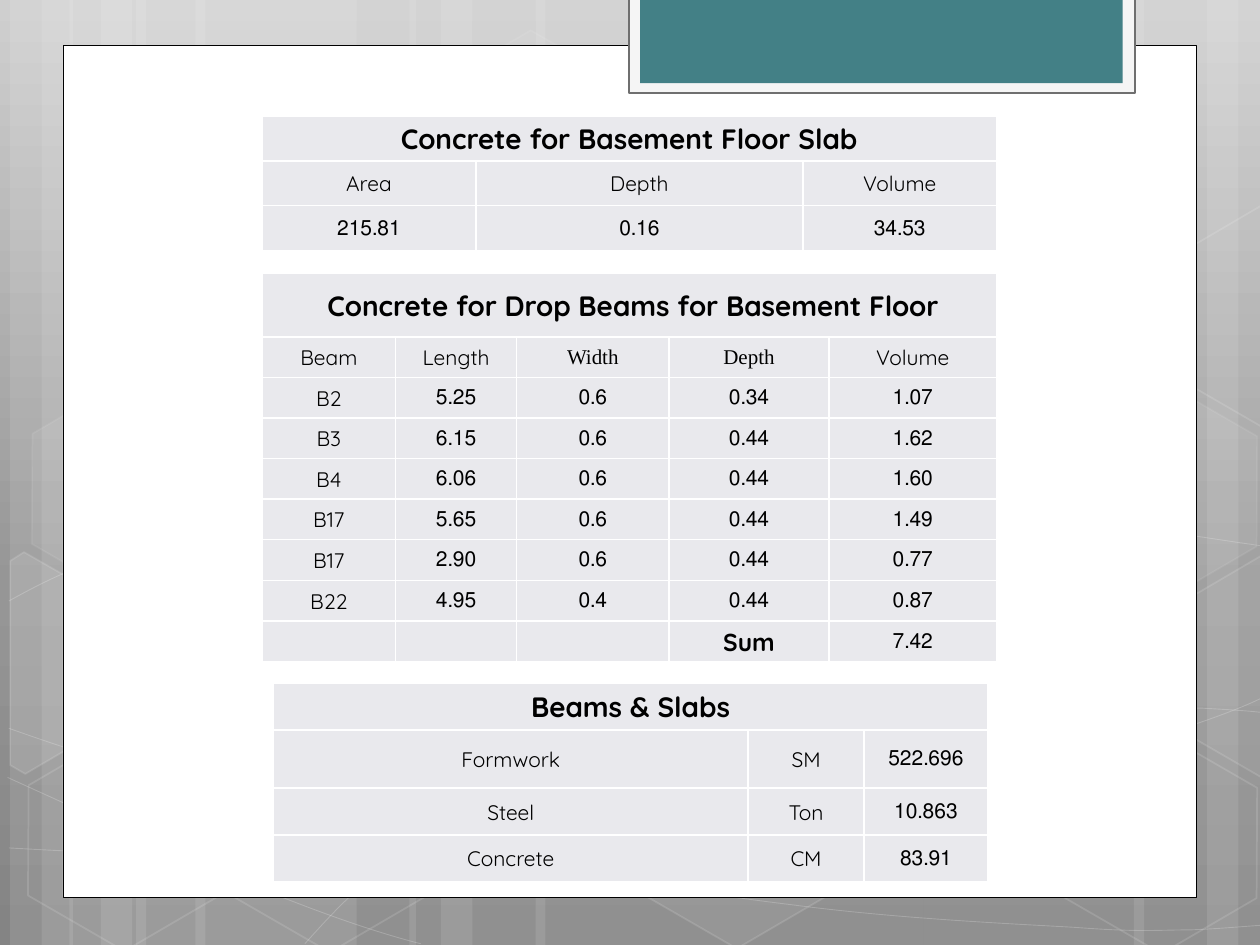
import math
from copy import deepcopy

from lxml import etree
from pptx import Presentation
from pptx.dml.color import RGBColor
from pptx.enum import shapes, text
from pptx.oxml.ns import qn
from pptx.util import Inches, Pt

COLORS = {"white": "FFFFFF", "black": "000000", "cell": "E9E9ED", "teal": "438086",
          "tab": "F5F5F5", "tab_edge": "6F6F6F"}
BACKGROUND = [(0, "CFCFCF"), (0.62, "969696"), (1, "848484")]
FONT, SERIF = "Quicksand", "Times New Roman"
TILT = 30

# Left and width of the full-height translucent bars
BARS = [(1.08, 1.75), (0.08, 0.5), (0.33, 0.83), (1.55, 1.75), (0.55, 0.5), (0.8, 0.83),
        (7.33, 1.75), (9.58, 0.5), (9, 0.83), (4.25, 3.08), (3.25, 0.5), (3.5, 0.83)]

# Bezier chains: a start point, then two handles and an end point per segment
CURVES = [
    [(0.07, 6.73), (0.61, 6.76), (1.15, 6.79), (1.9, 6.78), (2.65, 6.77), (3.58, 6.75),
     (4.58, 6.65), (5.58, 6.55), (7, 6.36), (7.92, 6.17), (8.83, 5.98), (9.77, 5.68),
     (10.07, 5.51)],
    [(0.07, 4.77), (0.36, 4.61), (0.65, 4.46), (1.21, 4.31), (1.78, 4.16), (2.59, 3.94),
     (3.47, 3.87), (4.36, 3.8), (5.44, 3.79), (6.54, 3.87), (7.64, 3.95), (9.47, 4.26),
     (10.07, 4.34)],
    [(0.06, 6.17), (1.27, 6.72), (2.47, 7.27), (3.34, 7.49)],
    [(0.07, 5.78), (0.38, 5.89), (0.7, 6), (1.28, 6.16), (1.86, 6.31), (2.73, 6.56),
     (3.57, 6.73), (4.4, 6.9), (5.45, 7.08), (6.28, 7.18), (7.11, 7.29), (8, 7.33),
     (8.53, 7.36), (9.05, 7.4), (9.19, 7.38), (9.45, 7.38), (9.71, 7.37), (9.89, 7.35),
     (10.07, 7.34)],
    [(2.42, 7.49), (2.6, 7.29), (2.78, 7.09), (3.02, 6.91), (3.26, 6.73), (3.6, 6.53),
     (3.88, 6.39), (4.16, 6.25), (4.33, 6.19), (4.7, 6.09), (5.06, 5.99), (5.73, 5.85),
     (6.08, 5.78), (6.44, 5.71), (6.49, 5.71), (6.8, 5.69), (7.11, 5.66), (7.6, 5.63),
     (7.94, 5.62), (8.29, 5.61), (8.86, 5.62), (8.86, 5.62), (9.08, 5.62), (9.31, 5.62),
     (9.53, 5.62), (9.71, 5.63), (9.88, 5.64), (9.97, 5.65), (10.06, 5.66), (10.03, 5.65),
     (10.06, 5.66)],
]

# Left, top, fill opacity (0 = no fill), line opacity
HEXAGONS = [(3.34, 0.36, 4, 8), (4.97, 5.89, 6, 12), (0.11, 5.91, 0, 12), (0.14, 3.12, 7, 8),
            (1.74, 5.92, 0, 12), (7.53, 4.53, 10, 12), (8.34, 5.93, 0, 12), (8.34, 3.14, 7, 8)]

# Hexagons cut off by the slide edge: centre of rotation, corners, fill opacity
CUT_HEXAGONS = [
    ((0.36, 5.35), [(0.08, 4.45), (0.19, 4.38), (0.96, 4.82), (0.95, 5.7), (0.2, 6.14),
                    (0.08, 6.07)], 10),
    ((9.85, 5.2), [(9.26, 4.85), (10.01, 4.41), (10.09, 4.46), (10.09, 6.13), (10.02, 6.17),
                   (9.26, 5.73)], 4),
    ((9.85, 2.41), [(9.26, 2.07), (10.01, 1.63), (10.1, 1.68), (10.09, 3.35), (10.02, 3.39),
                    (9.26, 2.95)], 0),
]

# Left, top, width, height, fill, line colour, line width
PANELS = [(0.5, 0.36, 9, 6.76, "white", "black", 0.5),
          (4.99, -0.02, 4.02, 0.76, "tab", "tab_edge", 1.25),
          (5.08, -0.02, 3.83, 0.68, "teal", None, 0)]

# Columns and rows are shares of the width and height in the box
TABLES = [
    {"box": (2.08, 0.92, 5.83, 1.07), "columns": [1.7, 2.6, 1.54], "rows": [1] * 3,
     "title": "Concrete for Basement Floor Slab",
     "body": [("Area", "Depth", "Volume"), ("215.81", "0.16", "34.53")]},
    {"box": (2.08, 2.17, 5.83, 3.08), "columns": [1.06, 0.96, 1.21, 1.27, 1.33],
     "rows": [0.5] + [0.32] * 8,
     "title": "Concrete for Drop Beams for Basement Floor ",
     "serif": [(1, 2), (1, 3)],
     "body": [("Beam", "Length", "Width", "Depth", "Volume"),
              ("B2", "5.25", "0.6", "0.34", "1.07"),
              ("B3", "6.15", "0.6", "0.44", "1.62"),
              ("B4", "6.06", "0.6", "0.44", "1.60"),
              ("B17", "5.65", "0.6", "0.44", "1.49"),
              ("B17", "2.90", "0.6", "0.44", "0.77"),
              ("B22", "4.95", "0.4", "0.44", "0.87"),
              ("", "", "", "Sum", "7.42")]},
    {"box": (2.17, 5.42, 5.67, 1.58), "columns": [3.76, 0.92, 0.98],
     "rows": [0.37, 0.46, 0.37, 0.37],
     "title": "Beams & Slabs",
     "body": [("Formwork", "SM", "522.696"), ("Steel", "Ton", "10.863"),
              ("Concrete", "CM", "83.91")]},
]


def rgb(name):
    return RGBColor.from_string(COLORS[name])


def paint(fill, color, opacity=100):
    """Apply a solid fill; an opacity of 0 means no fill."""
    if not opacity:
        fill.background()
        return
    fill.solid()
    fill.fore_color.rgb = rgb(color)


def set_opacity(parent, opacity):
    color = parent.find(qn("a:solidFill") + "/" + qn("a:srgbClr"))
    if color is not None and opacity < 100:
        etree.SubElement(color, qn("a:alpha"), val=str(opacity * 1000))


def style(shape, fill, line, width, fill_opacity=100, line_opacity=100):
    shape.shadow.inherit = False
    paint(shape.fill, fill, fill_opacity)
    set_opacity(shape.element.spPr, fill_opacity)
    if line:
        paint(shape.line.fill, line)
        shape.line.width = Pt(width)
        set_opacity(shape.element.spPr.find(qn("a:ln")), line_opacity)
    else:
        shape.line.fill.background()


def add_shape(slide, kind, *box):
    return slide.shapes.add_shape(kind, *(Inches(length) for length in box))


def add_outline(slide, points, close):
    points = [(Inches(x), Inches(y)) for x, y in points]
    builder = slide.shapes.build_freeform(*points[0])
    builder.add_line_segments(points[1:], close=close)
    return builder.convert_to_shape()


def add_curve(slide, chain):
    """Draw the chain as an outline, then join every three points into a Bezier segment."""
    shape = add_outline(slide, chain, False)
    lines = list(shape.element.iter(qn("a:lnTo")))
    for first in range(0, len(lines), 3):
        segment = etree.Element(qn("a:cubicBezTo"))
        lines[first].addprevious(segment)
        for line in lines[first:first + 3]:
            segment.append(line[0])
            line.getparent().remove(line)
    return shape


def turn_back(point, center):
    """Undo the tilt of a point around the centre."""
    x, y = point[0] - center[0], point[1] - center[1]
    cos, sin = math.cos(math.radians(TILT)), math.sin(math.radians(TILT))
    return center[0] + x * cos + y * sin, center[1] - x * sin + y * cos


def fill_background(slide):
    fill = slide.background.fill
    fill.gradient()
    fill.gradient_angle = 270
    stop_list = slide.element.find(".//" + qn("a:gsLst"))
    stop_list.append(deepcopy(stop_list[-1]))
    for stop, (position, color) in zip(fill.gradient_stops, BACKGROUND):
        stop.position = position
        stop.color.rgb = RGBColor.from_string(color)


def style_cell(cell, content, font_name, size, bold):
    paint(cell.fill, "cell")
    cell.vertical_anchor = text.MSO_ANCHOR.MIDDLE
    cell.margin_left = cell.margin_right = cell.margin_top = Inches(0.01)
    cell.margin_bottom = 0
    cell.text = content
    paragraph = cell.text_frame.paragraphs[0]
    paragraph.alignment = text.PP_ALIGN.CENTER
    font = paragraph.font
    font.name, font.size, font.bold = font_name, Pt(size), bold
    font.color.rgb = rgb("black")
    paragraph._p.pPr.set("rtl", "1")
    for position, side in enumerate(("lnL", "lnR", "lnT", "lnB")):
        border = etree.Element(qn("a:" + side), w=str(Pt(1)))
        solid = etree.SubElement(border, qn("a:solidFill"))
        etree.SubElement(solid, qn("a:srgbClr"), val=COLORS["white"])
        cell._tc.tcPr.insert(position, border)


def add_quantity_table(slide, data):
    columns, rows, box = data["columns"], data["rows"], data["box"]
    table = slide.shapes.add_table(len(rows), len(columns), *map(Inches, box)).table
    for column, share in zip(table.columns, columns):
        column.width = Inches(box[2] * share / sum(columns))
    for row, share in zip(table.rows, rows):
        row.height = Inches(box[3] * share / sum(rows))
    title_row = [data["title"]] + [""] * (len(columns) - 1)
    for r, values in enumerate([title_row] + data["body"]):
        for c, value in enumerate(values):
            size = 16 if r == 0 else 14 if value == "Sum" else 12
            name = SERIF if (r, c) in data.get("serif", []) else FONT
            style_cell(table.cell(r, c), value, name, size, size > 12)
    table.cell(0, 0).merge(table.cell(0, len(columns) - 1))


def main():
    presentation = Presentation()
    presentation.slide_width, presentation.slide_height = Inches(10), Inches(7.5)
    slide = presentation.slides.add_slide(presentation.slide_layouts[6])
    fill_background(slide)
    rectangle, hexagon = shapes.MSO_SHAPE.RECTANGLE, shapes.MSO_SHAPE.HEXAGON
    for left, width in BARS:
        style(add_shape(slide, rectangle, left, 0, width, 7.5), "white", None, 0, 10)
    for chain in CURVES:
        style(add_curve(slide, chain), "white", "white", 0.5, 0, 20)
    for left, top, fill_opacity, line_opacity in HEXAGONS:
        shape = add_shape(slide, hexagon, left, top, 1.75, 1.52)
        shape.rotation = TILT
        shape.adjustments[0] = 0.285
        style(shape, "white", "white", 1, fill_opacity, line_opacity)
    for center, corners, fill_opacity in CUT_HEXAGONS:
        shape = add_outline(slide, [turn_back(corner, center) for corner in corners], True)
        shape.rotation = TILT
        style(shape, "white", "white", 1, fill_opacity, 12)
    for *box, fill, line, width in PANELS:
        style(add_shape(slide, rectangle, *box), fill, line, width)
    for data in TABLES:
        add_quantity_table(slide, data)
    presentation.save("out.pptx")


if __name__ == "__main__":
    main()
